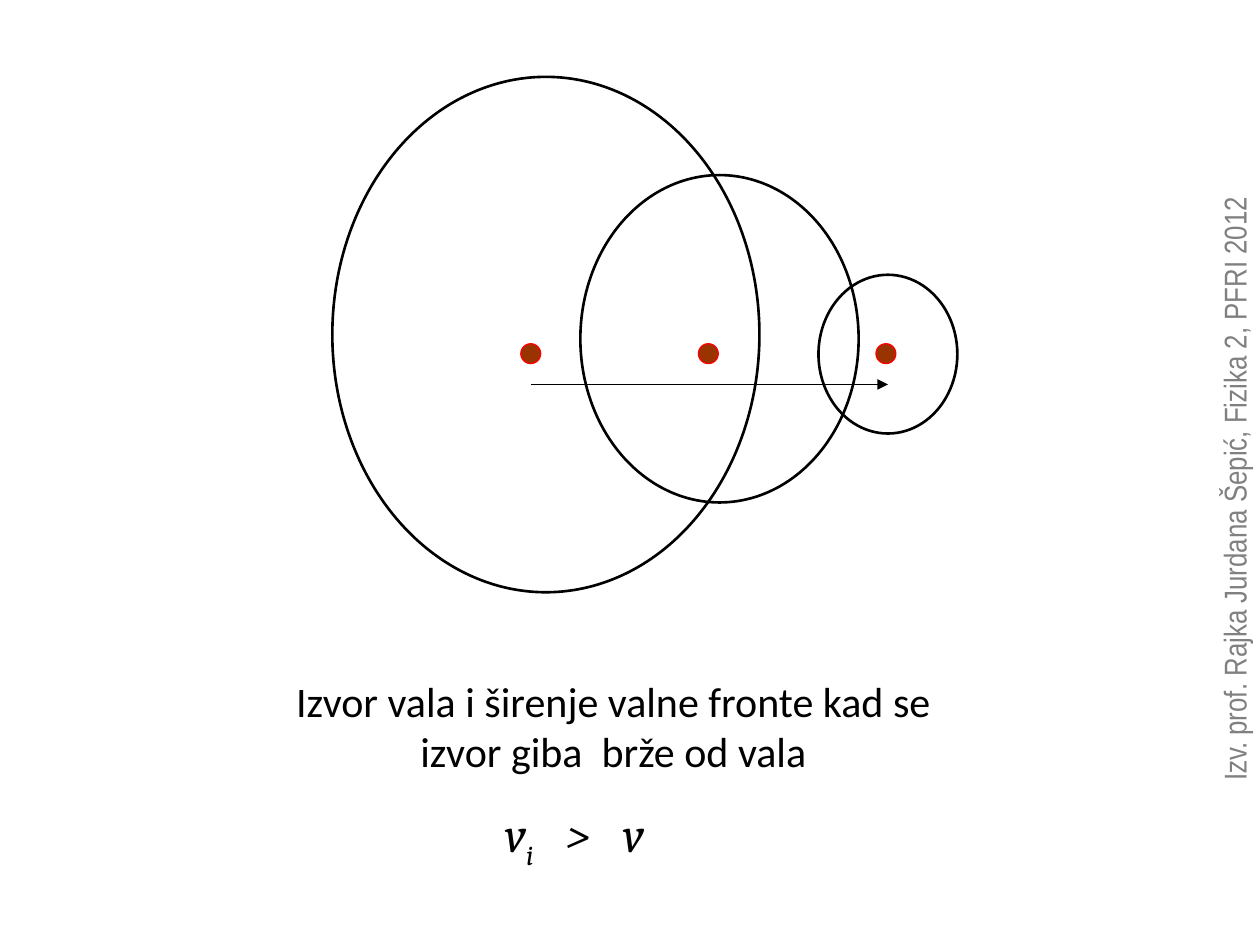
import dataclasses

import pptx
import pptx.dml.color
import pptx.enum.shapes
import pptx.enum.text
import pptx.oxml.xmlchemy
import pptx.util
from pptx.util import Cm


@dataclasses.dataclass(frozen=True)
class Theme:
    ink: str = "000000"
    source_fill: str = "993300"
    source_line: str = "FF0000"
    credit: str = "808080"
    front_width: float = 1.5
    thin_width: float = 0.75
    caption_size: int = 24
    formula_size: int = 28
    credit_size: int = 18


THEME = Theme()


def color(value):
    return pptx.dml.color.RGBColor.from_string(value)


def apply_format(target, values):
    for name, value in values.items():
        setattr(target, name, value)


def add_circle(slide, box, line_color, line_width, fill_color=None):
    shape = slide.shapes.add_shape(
        pptx.enum.shapes.MSO_SHAPE.OVAL, *(Cm(length) for length in box))
    shape.shadow.inherit = False
    if fill_color:
        shape.fill.solid()
        shape.fill.fore_color.rgb = color(fill_color)
    else:
        shape.fill.background()
    shape.line.color.rgb = color(line_color)
    shape.line.width = pptx.util.Pt(line_width)


def add_arrow(slide, start, end):
    connector = slide.shapes.add_connector(
        pptx.enum.shapes.MSO_CONNECTOR.STRAIGHT,
        *(Cm(length) for length in start + end))
    connector.line.color.rgb = color(THEME.ink)
    connector.line.width = pptx.util.Pt(THEME.thin_width)
    tail = pptx.oxml.xmlchemy.OxmlElement("a:tailEnd")
    tail.set("type", "triangle")
    properties = connector._element.spPr
    properties.ln.append(tail)
    properties.append(pptx.oxml.xmlchemy.OxmlElement("a:effectLst"))


def add_text(slide, box, paragraphs, font_format, text_color, alignment, rotation=0):
    shape = slide.shapes.add_textbox(*(Cm(length) for length in box))
    shape.rotation = rotation
    apply_format(shape.text_frame, {
        "word_wrap": False,
        "auto_size": pptx.enum.text.MSO_AUTO_SIZE.SHAPE_TO_FIT_TEXT,
    })
    for index, runs in enumerate(paragraphs):
        paragraph = (shape.text_frame.add_paragraph() if index
                     else shape.text_frame.paragraphs[0])
        paragraph.alignment = alignment
        for text, attributes in runs:
            run = paragraph.add_run()
            run.text = text
            apply_format(run.font, font_format)
            run.font.color.rgb = color(text_color)
            for name, value in attributes.items():
                run._r.get_or_add_rPr().set(name, value)


def add_wave_diagram(slide, left, top):
    wave_fronts = [
        (0, 0, 8.61, 10.39),
        (9.8, 3.99, 2.8, 3.2),
        (5, 1.98, 5.61, 6.6),
    ]
    for x, y, width, height in wave_fronts:
        add_circle(slide, (left + x, top + y, width, height),
                   THEME.ink, THEME.front_width)

    diameter, step = 0.4, 3.58
    for index in range(3):
        add_circle(slide, (left + 3.8 + index * step, top + 5.38, diameter, diameter),
                   THEME.source_line, THEME.thin_width, THEME.source_fill)

    add_arrow(slide, (left + 4, top + 6.2), (left + 11.2, top + 6.2))


def add_caption(slide, box):
    lines = ["Izvor vala i širenje valne fronte kad se", "izvor giba  brže od vala"]
    add_text(slide, box, [[(line, {})] for line in lines],
             {"name": "Calibri", "size": pptx.util.Pt(THEME.caption_size)},
             THEME.ink, pptx.enum.text.PP_ALIGN.CENTER)


def add_formula(slide, box):
    wide_space = (" ", {"spc": "1240"})
    runs = [("v", {}), ("i", {"baseline": "-25000"}),
            wide_space, (">", {}), wide_space, ("v", {})]
    add_text(slide, box, [runs],
             {"name": "Cambria", "size": pptx.util.Pt(THEME.formula_size), "italic": True},
             THEME.ink, pptx.enum.text.PP_ALIGN.LEFT)


def add_credit(slide, box):
    text = "Izv. prof. Rajka Jurdana Šepić, Fizika 2, PFRI 2012"
    add_text(slide, box, [[(text, {})]],
             {"name": "Arial Narrow", "size": pptx.util.Pt(THEME.credit_size)},
             THEME.credit, pptx.enum.text.PP_ALIGN.LEFT, rotation=270)


def main():
    presentation = pptx.Presentation()
    apply_format(presentation, {"slide_width": Cm(25.4), "slide_height": Cm(19.05)})
    slide = presentation.slides.add_slide(
        presentation.slide_layouts.get_by_name("Blank"))
    add_wave_diagram(slide, 6.7, 1.55)
    add_caption(slide, (5.56, 13.49, 13.61, 2.31))
    add_formula(slide, (9.93, 16.08, 3.86, 1.45))
    add_credit(slide, (18.67, 9.27, 12.42, 1.02))
    presentation.save("out.pptx")


if __name__ == "__main__":
    main()
